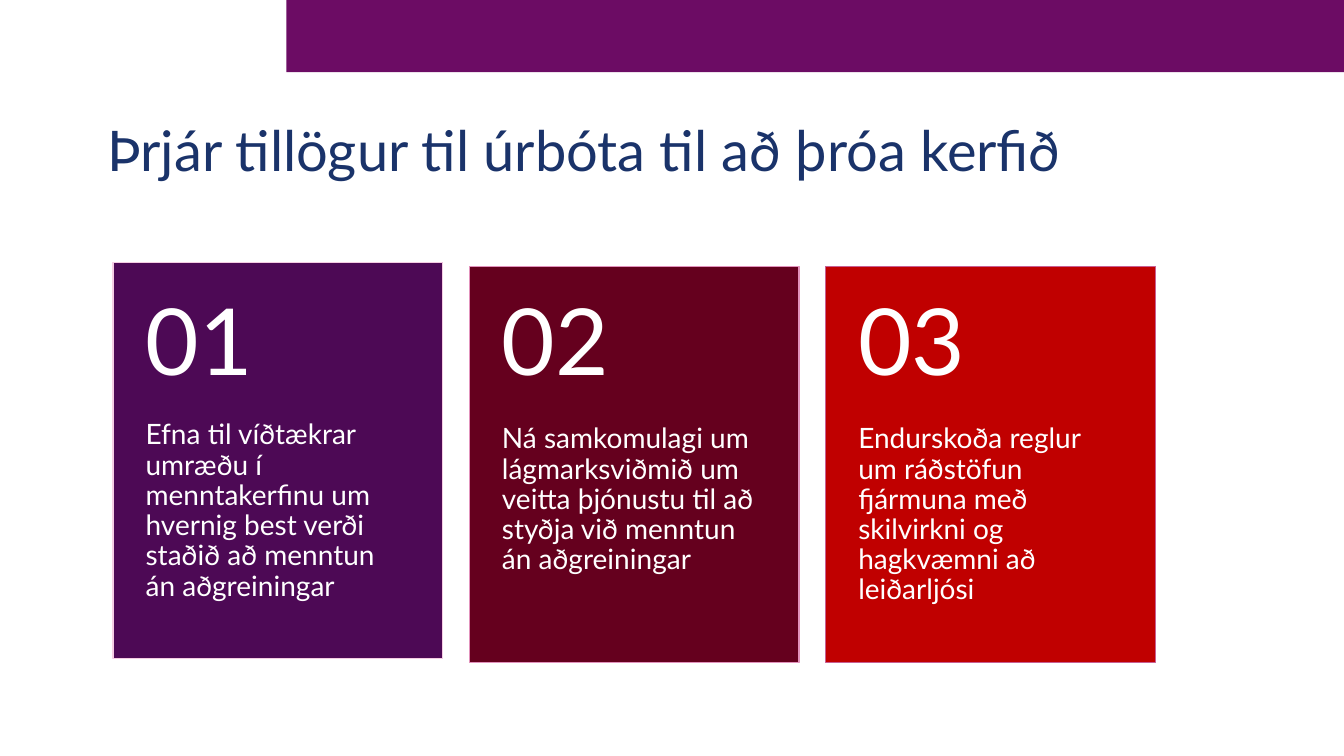
import pptx
import pptx.util
import pptx.dml.color
import pptx.enum.shapes
import pptx.enum.text

Cm, Pt = pptx.util.Cm, pptx.util.Pt
ANCHOR = pptx.enum.text.MSO_ANCHOR
COLORS = {"band": "6C0C64", "title": "1A336A", "text": "FFFFFF"}


def add_rect(s, left, top, width, height, fill, line=None):
    sp = s.shapes.add_shape(pptx.enum.shapes.MSO_SHAPE.RECTANGLE,
                            Cm(left), Cm(top), Cm(width), Cm(height))
    sp.shadow.inherit = False
    sp.fill.solid()
    sp.fill.fore_color.rgb = pptx.dml.color.RGBColor.from_string(fill)
    if line:
        sp.line.color.rgb = pptx.dml.color.RGBColor.from_string(line)
        sp.line.width = Pt(1)
    else:
        sp.line.fill.background()


def add_text(s, left, top, width, height, text, size, color, anchor,
             spacing=0.9, side=0, above=0, below=0):
    tf = s.shapes.add_textbox(Cm(left), Cm(top), Cm(width), Cm(height)).text_frame
    tf.word_wrap = True
    tf.vertical_anchor = anchor
    tf.margin_left = tf.margin_right = Cm(side)
    tf.margin_top, tf.margin_bottom = Cm(above), Cm(below)
    p = tf.paragraphs[0]
    p.line_spacing = spacing
    r = p.add_run()
    r.text = text
    r.font.size = Pt(size)
    r.font.name = "Lato"
    r.font.color.rgb = pptx.dml.color.RGBColor.from_string(color)


prs = pptx.Presentation()
prs.slide_width, prs.slide_height = Cm(33.87), Cm(19.05)
s = prs.slides.add_slide(prs.slide_layouts[6])

# Top band and title
add_rect(s, 7.22, 0, 26.65, 1.82, COLORS["band"])
add_text(s, 2.7, 2.58, 27.03, 2.07, "Þrjár tillögur til úrbóta til að þróa kerfið",
         40, COLORS["title"], ANCHOR.BOTTOM, spacing=0.99)

# Proposal cards: top, fill, line, text
cards = [
    (6.61, "4D0955", "F5CDE3",
     "Efna til víðtækrar umræðu í menntakerfinu um hvernig best verði staðið að menntun án aðgreiningar"),
    (6.71, "65001E", "E292BC",
     "Ná samkomulagi um lágmarksviðmið um veitta þjónustu til að styðja við menntun án aðgreiningar"),
    (6.71, "C00000", "C75F93",
     "Endurskoða reglur um ráðstöfun fjármuna með skilvirkni og hagkvæmni að leiðarljósi"),
]
card_w, card_h, pitch = 8.31, 9.98, 8.98
for i, (top, fill, line, text) in enumerate(cards):
    left = 2.85 + i * pitch
    add_rect(s, left, top, card_w, card_h, fill, line)
    add_text(s, left, top + 3.99, card_w, 5.99, text, 20, COLORS["text"],
             ANCHOR.TOP, side=0.82, below=0.91)
    add_text(s, left, 6.71, card_w, 3.99, f"{i + 1:02}", 66, COLORS["text"],
             ANCHOR.MIDDLE, side=0.82, above=0.46, below=0.46)

prs.save("out.pptx")
